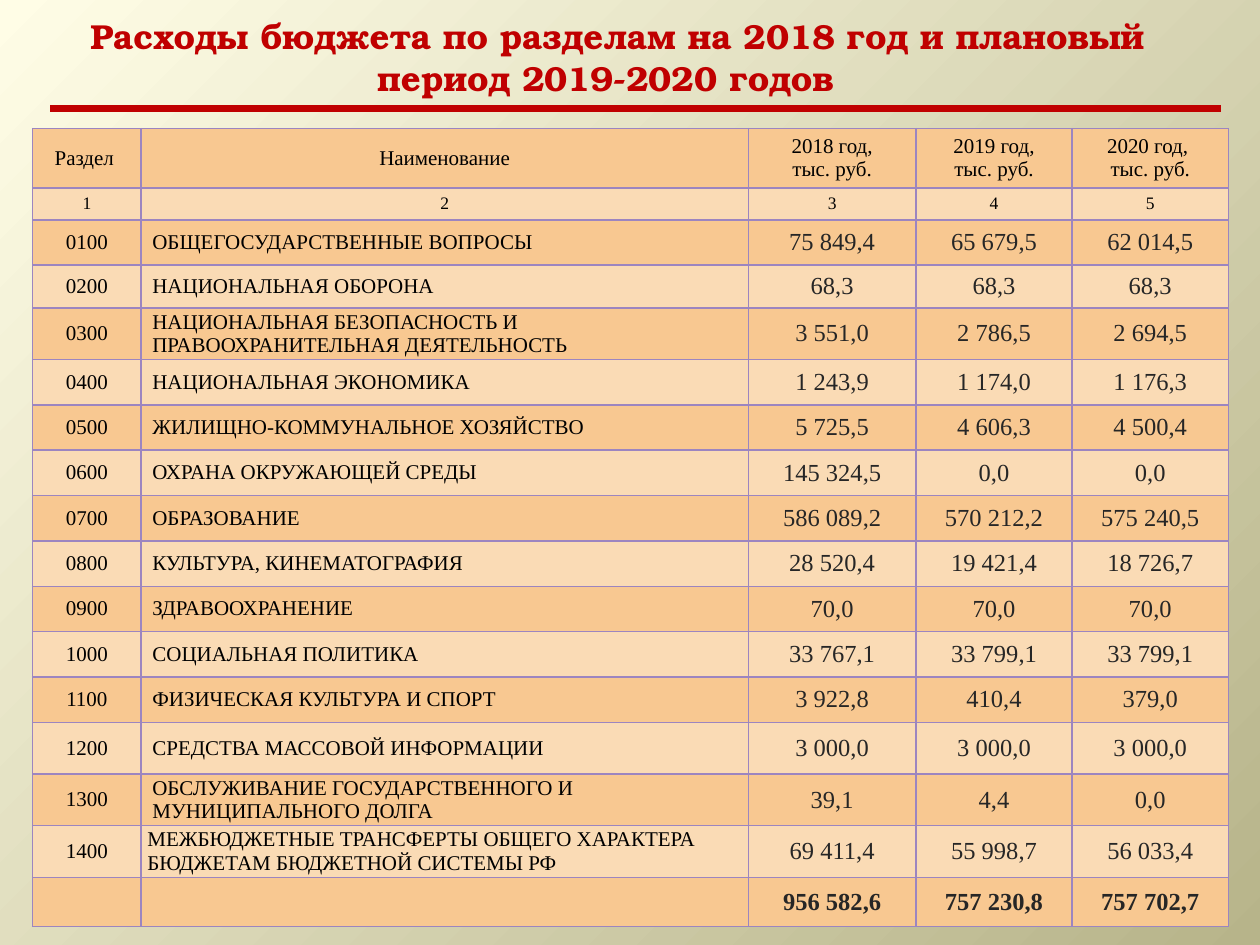
import dataclasses

import lxml.etree
import pptx
import pptx.dml.color
import pptx.enum.shapes
import pptx.enum.text
import pptx.oxml
import pptx.oxml.ns
import pptx.util

ALIGN = pptx.enum.text.PP_ALIGN
ANCHOR = pptx.enum.text.MSO_ANCHOR
qn = pptx.oxml.ns.qn


@dataclasses.dataclass(frozen=True)
class Theme:
    head: str = "TeX Gyre Bonum"
    body: str = "Times New Roman"
    red: str = "C00000"
    ink: str = "000000"
    gray: str = "262626"
    edge: str = "9C85C0"
    bands: tuple = ("F8C891", "FADBB5")
    back: tuple = ("FFFDE6", "B7B48A")
    title: float = 19.8
    text: float = 12
    small: float = 10
    sum: float = 14
    rule: float = 3.75


THEME = Theme()
WIDE, HIGH = pptx.util.Inches(10), pptx.util.Inches(7.5)

TITLE = "Расходы бюджета по разделам на 2018 год и плановый период 2019-2020 годов"
HEADS = ["Раздел ", " Наименование ", "2018 год,\nтыс. руб.",
         "2019 год,\nтыс. руб.", "2020 год, \nтыс. руб."]
ITEMS = [
    ("0100", "ОБЩЕГОСУДАРСТВЕННЫЕ ВОПРОСЫ", "75 849,4", "65 679,5", "62 014,5"),
    ("0200", "НАЦИОНАЛЬНАЯ ОБОРОНА", "68,3", "68,3", "68,3"),
    ("0300", "НАЦИОНАЛЬНАЯ БЕЗОПАСНОСТЬ И\nПРАВООХРАНИТЕЛЬНАЯ ДЕЯТЕЛЬНОСТЬ",
     "3 551,0", "2 786,5", "2 694,5"),
    ("0400", "НАЦИОНАЛЬНАЯ ЭКОНОМИКА", "1 243,9", "1 174,0", "1 176,3"),
    ("0500", "ЖИЛИЩНО-КОММУНАЛЬНОЕ ХОЗЯЙСТВО", "5 725,5", "4 606,3", "4 500,4"),
    ("0600", "ОХРАНА ОКРУЖАЮЩЕЙ СРЕДЫ", "145 324,5", "0,0", "0,0"),
    ("0700", "ОБРАЗОВАНИЕ", "586 089,2", "570 212,2", "575 240,5"),
    ("0800", "КУЛЬТУРА, КИНЕМАТОГРАФИЯ", "28 520,4", "19 421,4", "18 726,7"),
    ("0900", "ЗДРАВООХРАНЕНИЕ", "70,0", "70,0", "70,0"),
    ("1000", "СОЦИАЛЬНАЯ ПОЛИТИКА", "33 767,1", "33 799,1", "33 799,1"),
    ("1100", "ФИЗИЧЕСКАЯ КУЛЬТУРА И СПОРТ", "3 922,8", "410,4", "379,0"),
    ("1200", "СРЕДСТВА МАССОВОЙ ИНФОРМАЦИИ", "3 000,0", "3 000,0", "3 000,0"),
    ("1300", "ОБСЛУЖИВАНИЕ ГОСУДАРСТВЕННОГО И\nМУНИЦИПАЛЬНОГО ДОЛГА",
     "39,1", "4,4", "0,0"),
    ("1400", "МЕЖБЮДЖЕТНЫЕ ТРАНСФЕРТЫ ОБЩЕГО ХАРАКТЕРА\nБЮДЖЕТАМ БЮДЖЕТНОЙ СИСТЕМЫ РФ",
     "69 411,4", "55 998,7", "56 033,4"),
]
TOTAL = ("", "", "956 582,6", "757 230,8", "757 702,7")

# Shares of the slide, in percent.
COLS = [8.6, 48.2, 13.3, 12.4, 12.4]
ROWS = [6.27, 3.33, 4.8, 4.53, 5.47] + [4.8] * 7 + [5.47] * 3 + [5.2]
ROWS.insert(5, 4.8)


def part_x(share):
    return round(WIDE * share / 100)


def part_y(share):
    return round(HIGH * share / 100)


def place(x, y, wide, high):
    """Turn percent shares of the slide into a left, top, width, height."""
    return part_x(x), part_y(y), part_x(wide), part_y(high)


def tint(hue):
    return pptx.dml.color.RGBColor.from_string(hue)


def style(frame, size, hue, face=THEME.body, bold=False, align=ALIGN.CENTER):
    for para in frame.paragraphs:
        para.alignment = align
        for run in para.runs:
            font = run.font
            font.name, font.size, font.bold = face, pptx.util.Pt(size), bold
            font.color.rgb = tint(hue)


def add_back(slide):
    """Fill the background with a round gradient that starts at top left."""
    stops = "".join(
        f'<a:gs pos="{spot}"><a:srgbClr val="{hue}"/></a:gs>'
        for spot, hue in zip((0, 100000), THEME.back))
    back = pptx.oxml.parse_xml(
        f'<p:bg {pptx.oxml.ns.nsdecls("p", "a")}><p:bgPr><a:gradFill rotWithShape="1">'
        f'<a:gsLst>{stops}</a:gsLst><a:path path="circle">'
        '<a:fillToRect r="100000" b="100000"/></a:path></a:gradFill>'
        '<a:effectLst/></p:bgPr></p:bg>')
    slide.element.find(qn("p:cSld")).insert(0, back)


def add_title(slide):
    title = slide.shapes.title
    title.left, title.top, title.width, title.height = place(-0.8, 1, 97.7, 10)
    frame = title.text_frame
    frame.text = TITLE
    frame.word_wrap = True
    frame.auto_size = pptx.enum.text.MSO_AUTO_SIZE.NONE
    frame.vertical_anchor = ANCHOR.MIDDLE
    style(frame, THEME.title, THEME.red, THEME.head, True)
    props = frame.paragraphs[0]._p.get_or_add_pPr()
    props.set("indent", str(part_x(1.9)))


def add_rule(slide):
    line = slide.shapes.add_connector(
        pptx.enum.shapes.MSO_CONNECTOR.STRAIGHT,
        part_x(4), part_y(11.47), part_x(96.9), part_y(11.47))
    line.line.color.rgb = tint(THEME.red)
    line.line.width = pptx.util.Pt(THEME.rule)
    lxml.etree.SubElement(line._element.spPr, qn("a:effectLst"))


def edge(cell):
    props = cell._tc.get_or_add_tcPr()
    for side in ("lnL", "lnR", "lnT", "lnB"):
        line = lxml.etree.SubElement(props, qn("a:" + side), w="12700")
        fill = lxml.etree.SubElement(line, qn("a:solidFill"))
        lxml.etree.SubElement(fill, qn("a:srgbClr"), val=THEME.edge)


def pad(cell, left=0.0):
    cell.margin_left = part_x(left)
    cell.margin_right = cell.margin_top = cell.margin_bottom = 0


def dress(cell, row, col):
    """Format a cell by its role: heading, column number, code, name or sum."""
    frame = cell.text_frame
    cell.vertical_anchor = ANCHOR.BOTTOM if row == 1 else ANCHOR.MIDDLE
    if row < 2:
        style(frame, THEME.small if row else THEME.text, THEME.ink)
    elif col > 1:
        pad(cell)
        style(frame, THEME.sum, THEME.gray, bold=row == len(ROWS) - 1)
    elif col == 1:
        pad(cell, 0.5 if row == len(ROWS) - 2 else 0.9)
        style(frame, THEME.text, THEME.ink, align=ALIGN.LEFT)
    else:
        pad(cell)
        style(frame, THEME.text, THEME.ink)


def add_costs(slide):
    data = [HEADS, "12345", *ITEMS, TOTAL]
    spot = place(2.6, 13.6, sum(COLS), sum(ROWS))
    table = slide.shapes.add_table(len(ROWS), len(COLS), *spot).table
    table.first_row = table.horz_banding = False
    for col, share in zip(table.columns, COLS):
        col.width = part_x(share)
    for row, share in zip(table.rows, ROWS):
        row.height = part_y(share)
    for row, texts in enumerate(data):
        for col, text in enumerate(texts):
            cell = table.cell(row, col)
            cell.text_frame.text = text
            edge(cell)
            cell.fill.solid()
            cell.fill.fore_color.rgb = tint(THEME.bands[row % 2])
            dress(cell, row, col)


def main():
    deck = pptx.Presentation()
    deck.slide_width, deck.slide_height = WIDE, HIGH
    slide = deck.slides.add_slide(deck.slide_layouts[5])
    add_back(slide)
    add_costs(slide)
    add_title(slide)
    add_rule(slide)
    deck.save("out.pptx")


if __name__ == "__main__":
    main()
